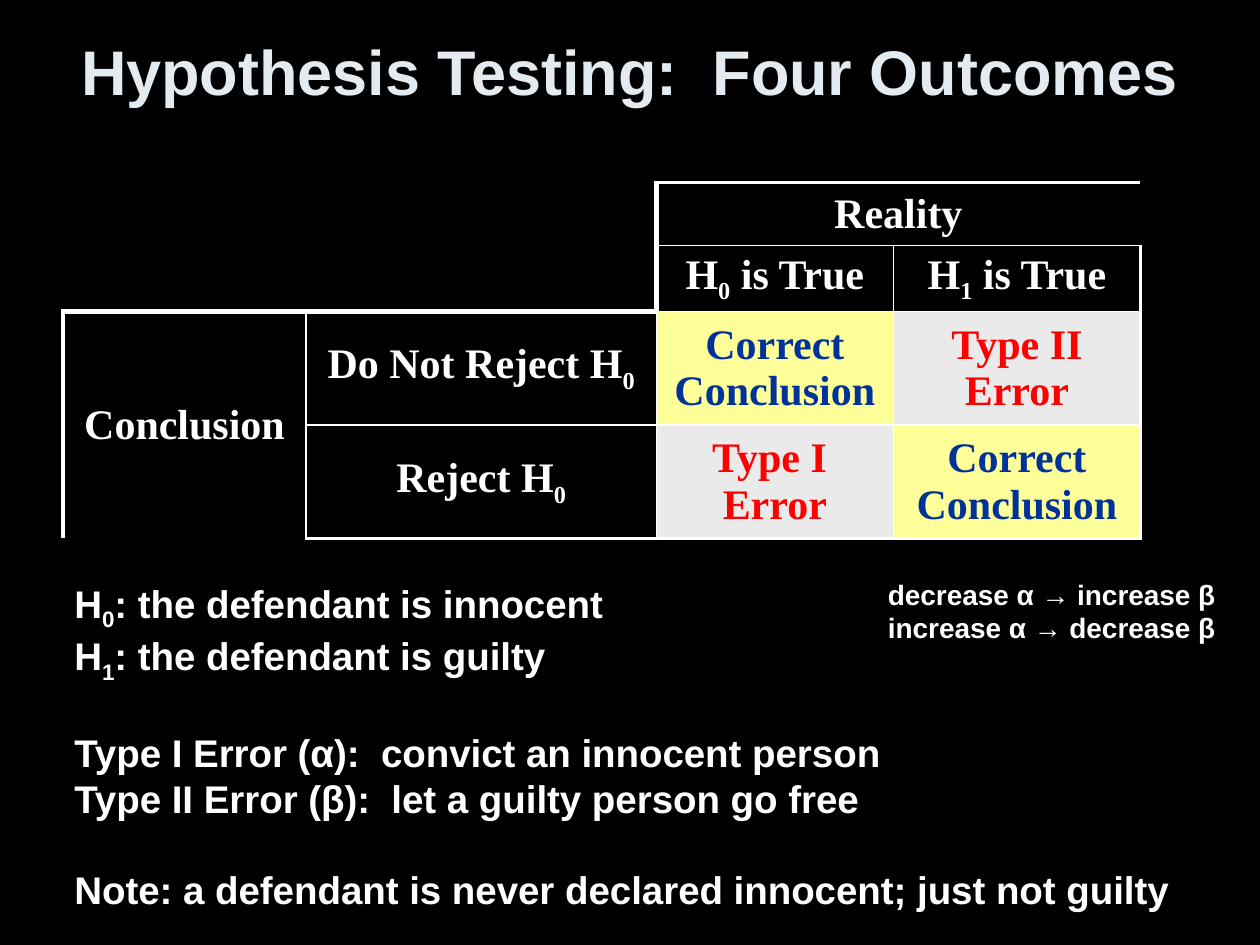
from dataclasses import dataclass

from lxml.etree import SubElement
from pptx import Presentation
from pptx.dml.color import RGBColor
from pptx.enum.text import MSO_ANCHOR as Anchor, MSO_AUTO_SIZE as AutoSize, PP_ALIGN as Align
from pptx.oxml.ns import qn
from pptx.util import Cm, Pt


@dataclass(frozen=True)
class Theme:
    background: str = "000000"
    text: str = "FFFFFF"
    title: str = "E3EBF1"
    correct: str = "003399"
    correct_fill: str = "FFFF99"
    error: str = "FF0000"
    error_fill: str = "EAEAEA"
    body_font: str = "Arial"
    table_font: str = "Times New Roman"
    title_size: int = 36
    table_size: int = 24
    body_size: int = 22
    side_size: int = 16
    section_gap: float = 25.3


THEME = Theme()

COLUMN_WIDTHS = (4.9, 7.06, 4.78, 4.98)
ROW_HEIGHTS = (1.27, 1.27, 2.29, 2.29)

# Line widths in points: one row per table row, one entry per vertical grid line.
VERTICAL_LINES = (
    (0, 0, 3, 0, 2.25),
    (0, 0, 3, 1, 2.25),
    (2.25, 1, 1, 1, 2.25),
    (2.25, 1, 1, 1, 2.25),
)
# One row per horizontal grid line, one entry per table column.
HORIZONTAL_LINES = (
    (0, 0, 2.25, 2.25),
    (0, 0, 1, 1),
    (3, 3, 1, 1),
    (0, 1, 1, 1),
    (2.25, 2.25, 2.25, 2.25),
)

HEADINGS = {
    (0, 2): "Reality",
    (1, 2): "H|0| is True",
    (1, 3): "H|1| is True",
    (2, 0): "Conclusion",
    (2, 1): "Do Not Reject H|0|",
    (3, 1): "Reject H|0|",
}
CORRECT = {(2, 2): "Correct\nConclusion", (3, 3): "Correct\nConclusion"}
ERRORS = {(2, 3): "Type II Error", (3, 2): "Type I \nError"}

# Each section is a group of lines, set apart from the one before.
EXAMPLE_SECTIONS = (
    ("H|0|: the defendant is innocent", "H|1|: the defendant is guilty"),
    (
        "Type I Error (α):  convict an innocent person",
        "Type II Error (β):  let a guilty person go free",
    ),
    ("Note: a defendant is never declared innocent; just not guilty",),
)
TRADE_OFF = (("decrease α → increase β", "increase α → decrease β"),)


def write_paragraph(paragraph, text, font_name, size, color, align=Align.LEFT):
    """Write text in which |x| marks a subscript and a newline a line break."""
    paragraph.alignment = align
    font = paragraph.font
    font.name, font.size, font.bold = font_name, Pt(size), True
    font.color.rgb = RGBColor.from_string(color)
    for line_number, line in enumerate(text.split("\n")):
        if line_number:
            paragraph.add_line_break()
        for index, part in enumerate(line.split("|")):
            if part:
                run = paragraph.add_run()
                run.text = part
                if index % 2:
                    run._r.get_or_add_rPr().set("baseline", "-25000")


def add_text(slide, box, sections, size, color=THEME.text, align=Align.LEFT):
    shape = slide.shapes.add_textbox(*(Cm(length) for length in box))
    frame = shape.text_frame
    frame.word_wrap = False
    frame.auto_size = AutoSize.SHAPE_TO_FIT_TEXT
    paragraph = None
    for section in sections:
        for index, line in enumerate(section):
            is_first = paragraph is None
            paragraph = frame.paragraphs[0] if is_first else frame.add_paragraph()
            if index == 0 and not is_first:
                paragraph.space_before = Pt(THEME.section_gap)
            write_paragraph(paragraph, line, THEME.body_font, size, color, align)
    return shape


def add_title(slide, text):
    shape = add_text(slide, (0, 0.25, 25.4, 2.34), ((text,),),
                     THEME.title_size, THEME.title, Align.CENTER)
    frame = shape.text_frame
    frame.word_wrap = True
    frame.auto_size = AutoSize.NONE
    frame.vertical_anchor = Anchor.MIDDLE


def set_borders(cell, row, column):
    widths = {
        "a:lnL": VERTICAL_LINES[row][column],
        "a:lnR": VERTICAL_LINES[row][column + 1],
        "a:lnT": HORIZONTAL_LINES[row][column],
        "a:lnB": HORIZONTAL_LINES[row + 1][column],
    }
    properties = cell._tc.get_or_add_tcPr()
    for tag, width in widths.items():
        line = SubElement(properties, qn(tag), w=str(Pt(width)))
        if width:
            fill = SubElement(line, qn("a:solidFill"))
            SubElement(fill, qn("a:srgbClr"), val=THEME.text)
        else:
            SubElement(line, qn("a:noFill"))


def fill_cells(table, texts, color, fill=None):
    for position, text in texts.items():
        cell = table.cell(*position)
        cell.vertical_anchor = Anchor.MIDDLE
        write_paragraph(cell.text_frame.paragraphs[0], text, THEME.table_font,
                        THEME.table_size, color, Align.CENTER)
        if fill:
            cell.fill.solid()
            cell.fill.fore_color.rgb = RGBColor.from_string(fill)


def add_outcome_table(slide):
    table = slide.shapes.add_table(
        len(ROW_HEIGHTS), len(COLUMN_WIDTHS), Cm(1.27), Cm(3.68),
        Cm(sum(COLUMN_WIDTHS)), Cm(sum(ROW_HEIGHTS))).table
    table.first_row = table.horz_banding = False
    for column, width in zip(table.columns, COLUMN_WIDTHS):
        column.width = Cm(width)
    for row, height in zip(table.rows, ROW_HEIGHTS):
        row.height = Cm(height)
    for row in range(len(ROW_HEIGHTS)):
        for column in range(len(COLUMN_WIDTHS)):
            cell = table.cell(row, column)
            set_borders(cell, row, column)
            cell.fill.background()
    table.cell(0, 2).merge(table.cell(0, 3))
    table.cell(2, 0).merge(table.cell(3, 0))
    fill_cells(table, HEADINGS, THEME.text)
    fill_cells(table, CORRECT, THEME.correct, THEME.correct_fill)
    fill_cells(table, ERRORS, THEME.error, THEME.error_fill)


def main():
    presentation = Presentation()
    presentation.slide_width, presentation.slide_height = Cm(25.4), Cm(19.05)
    slide = presentation.slides.add_slide(presentation.slide_layouts[6])
    background = slide.background.fill
    background.solid()
    background.fore_color.rgb = RGBColor.from_string(THEME.background)

    add_outcome_table(slide)
    add_text(slide, (1.25, 11.56, 22.91, 6.83), EXAMPLE_SECTIONS, THEME.body_size)
    add_text(slide, (17.65, 11.51, 7.19, 1.63), TRADE_OFF, THEME.side_size)
    add_title(slide, "Hypothesis Testing:  Four Outcomes")
    presentation.save("out.pptx")


if __name__ == "__main__":
    main()
